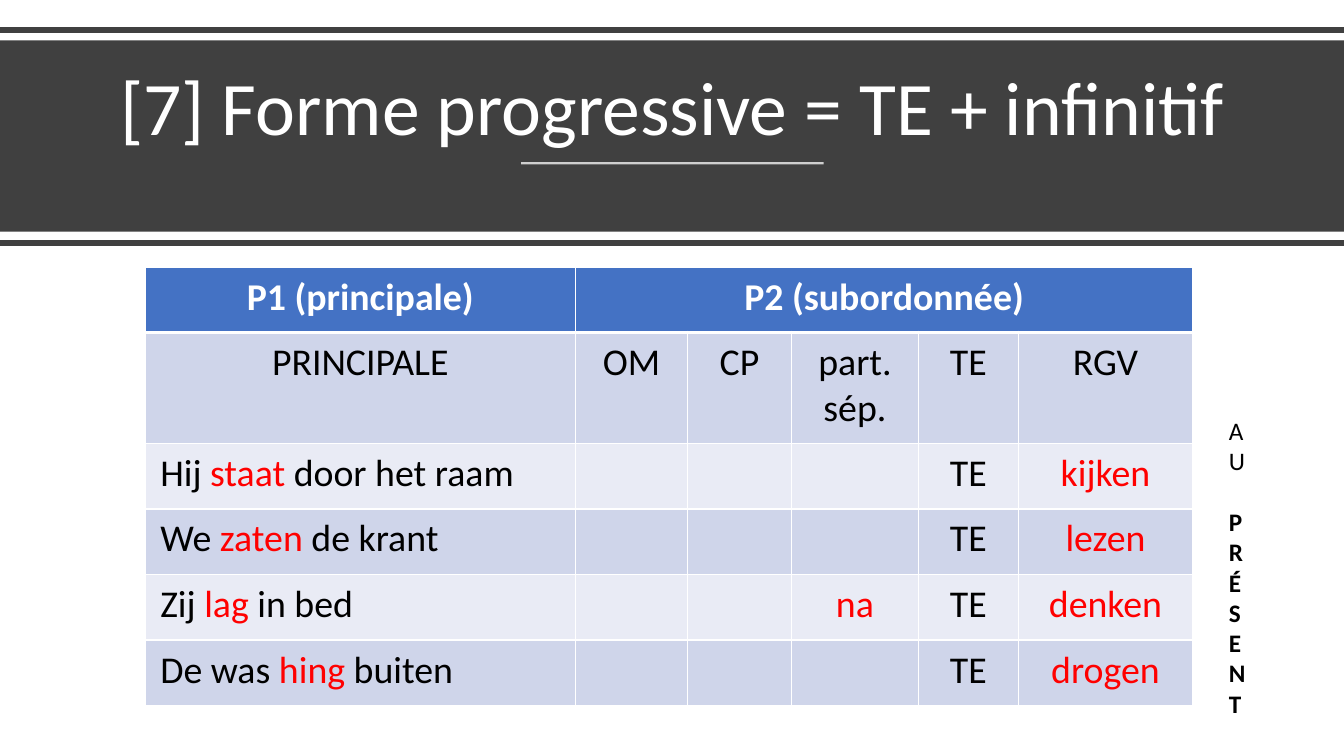
from lxml import etree
from pptx import Presentation
from pptx.dml.color import RGBColor
from pptx.enum.shapes import MSO_CONNECTOR, MSO_SHAPE
from pptx.enum.text import MSO_ANCHOR, MSO_AUTO_SIZE, PP_ALIGN
from pptx.oxml import parse_xml
from pptx.oxml.ns import nsdecls, qn
from pptx.util import Inches, Pt

RECT = MSO_SHAPE.RECTANGLE
LINE = MSO_CONNECTOR.STRAIGHT
LEFT, CENTER = PP_ALIGN.LEFT, PP_ALIGN.CENTER
BOTTOM = MSO_ANCHOR.BOTTOM
FIXED = MSO_AUTO_SIZE.NONE

WHITE = RGBColor(0xFF, 0xFF, 0xFF)
BLACK = RGBColor(0x00, 0x00, 0x00)
RED = RGBColor(0xFF, 0x00, 0x00)
GREY = RGBColor(0x40, 0x40, 0x40)
BLUE = RGBColor(0x44, 0x72, 0xC4)
BANDS = RGBColor(0xCF, 0xD5, 0xEA), RGBColor(0xE9, 0xEB, 0xF5)

WIDE, HIGH = Inches(13.33), Inches(7.5)
FONT = "Calibri"

# Table content: text between bars is red
HEAD = ["P1 (principale)", "P2 (subordonnée)"]
ROWS = [
    ["PRINCIPALE", "OM", "CP", "part. sép.", "TE", "RGV"],
    ["Hij |staat| door het raam", "", "", "", "TE", "|kijken|"],
    ["We| zaten| de krant", "", "", "", "TE", "|lezen|"],
    ["Zij |lag| in bed", "", "", "|na|", "TE", "|denken|"],
    ["De was |hing| buiten", "", "", "", "TE", "|drogen|"],
]
COLS = [32.03, 8.33, 7.73, 9.45, 7.43, 12.98]
TALL = [8.67, 14.67] + [8.67] * 4


def across(share):
    """Percent of the slide's width."""
    return int(WIDE * share / 100)


def down(share):
    """Percent of the slide's height."""
    return int(HIGH * share / 100)


def area(x, y, w, h):
    return across(x), down(y), across(w), down(h)


def style(item, **form):
    for name, value in form.items():
        setattr(item, name, value)


def write(para, text, size, color, bold=False):
    for i, part in enumerate(text.split("|")):
        if part:
            run = para.add_run()
            run.text = part
            style(run.font, name=FONT, size=Pt(size), bold=bold)
            run.font.color.rgb = RED if i % 2 else color


def add_rule(slide, x1, x2, y, color, width, alpha=None):
    rule = slide.shapes.add_connector(
        LINE, across(x1), down(y), across(x2), down(y))
    rule.line.width = Pt(width)
    rule.line.color.rgb = color
    props = rule.element.spPr
    if alpha:
        tint = props.find(".//" + qn("a:srgbClr"))
        etree.SubElement(tint, qn("a:alpha"), val=str(alpha * 1000))
    etree.SubElement(props, qn("a:effectLst"))


def add_band(slide, box, color):
    band = slide.shapes.add_shape(RECT, *box)
    band.shadow.inherit = False
    band.fill.solid()
    band.fill.fore_color.rgb = color
    band.line.fill.background()


def set_title(slide, box, text):
    title = slide.shapes.title
    style(title, **dict(zip(("left", "top", "width", "height"), box)))
    frame = title.text_frame
    style(frame, word_wrap=True, auto_size=FIXED, vertical_anchor=BOTTOM)
    para = frame.paragraphs[0]
    style(para, alignment=CENTER, line_spacing=0.9)
    write(para, text, 54, WHITE)
    # Bring the title in front of the band
    title.element.getparent().append(title.element)


def edge(cell, side, width):
    cell._tc.get_or_add_tcPr().append(parse_xml(
        f'<a:ln{side} {nsdecls("a")} w="{Pt(width)}"><a:solidFill>'
        f'<a:srgbClr val="{WHITE}"/></a:solidFill></a:ln{side}>'))


def fill_cell(cell, row, col, text):
    for side in "LRTB":
        thick = (row, side) in ((0, "B"), (1, "T"))
        edge(cell, side, 3 if thick else 1)
    cell.fill.solid()
    cell.fill.fore_color.rgb = BANDS[(row + 1) % 2] if row else BLUE
    style(cell, margin_left=Inches(0.15), margin_right=Inches(0.15),
          margin_top=Inches(0.07), margin_bottom=Inches(0.07))
    para = cell.text_frame.paragraphs[0]
    para.alignment = LEFT if row > 1 and col == 0 else CENTER
    write(para, text, 27, BLACK if row else WHITE, bold=row == 0)


def add_grid(slide, x, y):
    box = area(x, y, sum(COLS), sum(TALL))
    grid = slide.shapes.add_table(len(TALL), len(COLS), *box).table
    for col, share in zip(grid.columns, COLS):
        col.width = across(share)
    for row, share in zip(grid.rows, TALL):
        row.height = down(share)
    blank = [""] * (len(COLS) - len(HEAD))
    for r, texts in enumerate([HEAD + blank] + ROWS):
        for c, text in enumerate(texts):
            fill_cell(grid.cell(r, c), r, c, text)
    grid.cell(0, 1).merge(grid.cell(0, len(COLS) - 1))


def add_tense(slide, box):
    """Narrow box that wraps after each letter."""
    frame = slide.shapes.add_textbox(*box).text_frame
    frame.word_wrap = True
    write(frame.paragraphs[0], "AU", 18, BLACK)
    para = frame.add_paragraph()
    para.space_before = Pt(22)
    write(para, "PRÉSENT", 18, BLACK, bold=True)


def main():
    deck = Presentation()
    style(deck, slide_width=WIDE, slide_height=HIGH)
    slide = deck.slides.add_slide(deck.slide_layouts.get_by_name("Title Only"))

    # Title banner
    add_rule(slide, 0, 100, 4, GREY, 4)
    add_band(slide, area(0, 5.33, 100, 25.33), GREY)
    set_title(slide, area(4.35, 7.2, 91.37, 13.6),
              "[7] Forme progressive = TE + infinitif")
    add_rule(slide, 38.78, 61.29, 21.6, WHITE, 1.5, alpha=75)
    add_rule(slide, 0, 100, 32.13, GREY, 4)

    # Sentence table and tense label
    add_grid(slide, 10.8, 35.33)
    add_tense(slide, area(90.7, 54.27, 2.4, 41.73))
    deck.save("out.pptx")


if __name__ == "__main__":
    main()
